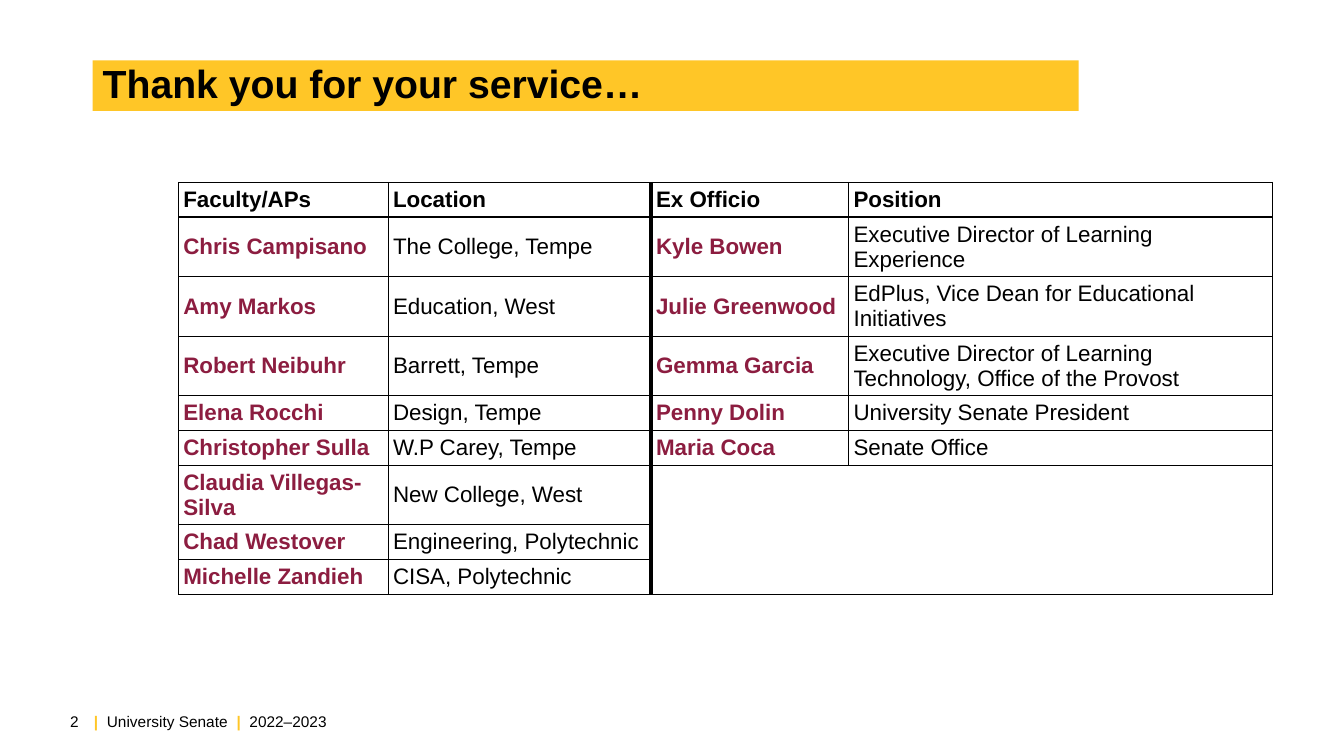
from dataclasses import dataclass, field

from lxml.etree import SubElement
from pptx import Presentation
from pptx.dml.color import RGBColor
from pptx.enum.text import MSO_ANCHOR as Anchor, PP_ALIGN as Align
from pptx.oxml.ns import qn
from pptx.slide import Slide
from pptx.util import Pt

COLORS = {"gold": "FFC627", "maroon": "8C1D40", "black": "000000"}
NO_GRID_STYLE = "{2D5ABB26-0587-4C30-8999-92F81FD0307C}"
THIN, MEDIUM, THICK = 0.67, 1, 3
CELL_INSET = 3.4

HEADINGS = ("Faculty/APs", "Location", "Ex Officio", "Position")
FACULTY = [
    ("Chris Campisano", "The College, Tempe"),
    ("Amy Markos", "Education, West"),
    ("Robert Neibuhr", "Barrett, Tempe"),
    ("Elena Rocchi", "Design, Tempe"),
    ("Christopher Sulla", "W.P Carey, Tempe"),
    ("Claudia Villegas-Silva", "New College, West"),
    ("Chad Westover", "Engineering, Polytechnic"),
    ("Michelle Zandieh", "CISA, Polytechnic"),
]
EX_OFFICIO = [
    ("Kyle Bowen", "Executive Director of Learning Experience"),
    ("Julie Greenwood", "EdPlus, Vice Dean for Educational Initiatives"),
    ("Gemma Garcia", "Executive Director of Learning Technology, Office of the Provost"),
    ("Penny Dolin", "University Senate President"),
    ("Maria Coca", "Senate Office"),
]
COLUMN_WIDTHS = [149.8, 187.9, 141.1, 302.4]
ONE_LINE, TWO_LINES = 24.75, 42.6
TWO_LINE_ROWS = {1, 2, 3, 6}


@dataclass
class SlideBuilder:
    slide: Slide
    font: str = "Arial"
    colors: dict = field(default_factory=lambda: COLORS)

    def add_words(self, paragraph, text, size, color="black", bold=False):
        run = paragraph.add_run()
        run.text = text
        for name, value in {"name": self.font, "size": Pt(size), "bold": bold}.items():
            setattr(run.font, name, value)
        run.font.color.rgb = RGBColor.from_string(self.colors[color])

    def place(self, shape, left, top, width, height):
        box = {"left": left, "top": top, "width": width, "height": height}
        for name, value in box.items():
            setattr(shape, name, Pt(value))

    def title(self, text, box):
        title = self.slide.shapes.title
        self.place(title, *box)
        title.fill.solid()
        title.fill.fore_color.rgb = RGBColor.from_string(self.colors["gold"])
        title.text_frame.vertical_anchor = Anchor.MIDDLE
        paragraph = title.text_frame.paragraphs[0]
        paragraph.alignment = Align.LEFT
        paragraph.line_spacing = Pt(30)
        self.add_words(paragraph, text, 28, bold=True)

    def text(self, pieces, box, alignment=Align.LEFT):
        frame = self.slide.shapes.add_textbox(*map(Pt, box)).text_frame
        frame.word_wrap = True
        frame.vertical_anchor = Anchor.MIDDLE
        paragraph = frame.paragraphs[0]
        paragraph.alignment = alignment
        for text, color, bold in pieces:
            self.add_words(paragraph, text, 11, color, bold)

    def borders(self, cell, widths):
        properties = cell._tc.get_or_add_tcPr()
        for side, width in widths.items():
            line = SubElement(properties, qn(f"a:ln{side}"), w=str(int(Pt(width))))
            fill = SubElement(line, qn("a:solidFill"))
            SubElement(fill, qn("a:srgbClr"), val=self.colors["black"])

    def cell(self, cell, text, color, bold, anchor, widths):
        for side in ("left", "right", "top", "bottom"):
            setattr(cell, f"margin_{side}", Pt(CELL_INSET))
        cell.vertical_anchor = anchor
        self.borders(cell, widths)
        cell.fill.background()
        paragraph = cell.text_frame.paragraphs[0]
        if text:
            self.add_words(paragraph, text, 16, color, bold)
        else:
            SubElement(paragraph._p, qn("a:endParaRPr"), sz="1600")

    def table(self, left, top, widths, heights):
        frame = self.slide.shapes.add_table(
            len(heights), len(widths), Pt(left), Pt(top), Pt(sum(widths)), Pt(sum(heights))
        )
        table = frame.table
        table.first_row = table.horz_banding = False
        table._tbl.tblPr.find(qn("a:tableStyleId")).text = NO_GRID_STYLE
        for column, width in zip(table.columns, widths):
            column.width = Pt(width)
        for row, height in zip(table.rows, heights):
            row.height = Pt(height)
        return table


def fill_service_table(builder):
    row_count = len(FACULTY) + 1
    heights = [TWO_LINES if row in TWO_LINE_ROWS else ONE_LINE for row in range(row_count)]
    table = builder.table(127.6, 130.3, COLUMN_WIDTHS, heights)
    empty_row = len(EX_OFFICIO) + 1
    table.cell(empty_row, 2).merge(table.cell(row_count - 1, 3))

    officers = EX_OFFICIO + [("", "")] * (len(FACULTY) - len(EX_OFFICIO))
    rows = [HEADINGS] + [person + officer for person, officer in zip(FACULTY, officers)]
    verticals = [THIN, MEDIUM, THICK, MEDIUM, THIN]
    for row, texts in enumerate(rows):
        for column, text in enumerate(texts):
            cell = table.cell(row, column)
            widths = {
                "L": verticals[column],
                "R": verticals[column + 1],
                "T": MEDIUM if row == 1 else THIN,
                "B": MEDIUM if row == 0 else THIN,
            }
            if cell.is_merge_origin:
                widths["R"] = THIN
            elif cell.is_spanned:
                outer = {"R": column == 3, "B": row == row_count - 1}
                widths = {side: THIN for side, shown in outer.items() if shown}
            is_name = row > 0 and column % 2 == 0
            builder.cell(
                cell,
                text,
                "maroon" if is_name else "black",
                is_name or row == 0,
                Anchor.MIDDLE if row else Anchor.TOP,
                widths,
            )


def main():
    presentation = Presentation()
    presentation.slide_width, presentation.slide_height = Pt(960), Pt(540)
    builder = SlideBuilder(presentation.slides.add_slide(presentation.slide_layouts[5]))

    builder.title("Thank you for your service…", (66.2, 43.2, 704.2, 36))
    fill_service_table(builder)
    footer = [
        ("|", "gold", True),
        ("  University Senate  ", "black", False),
        ("|", "gold", True),
        ("  2022–2023", "black", False),
    ]
    builder.text(footer, (60, 501.1, 366.5, 28.8))
    builder.text([("2", "black", False)], (28.1, 501.1, 35.3, 28.8), Align.RIGHT)
    presentation.save("out.pptx")


if __name__ == "__main__":
    main()
